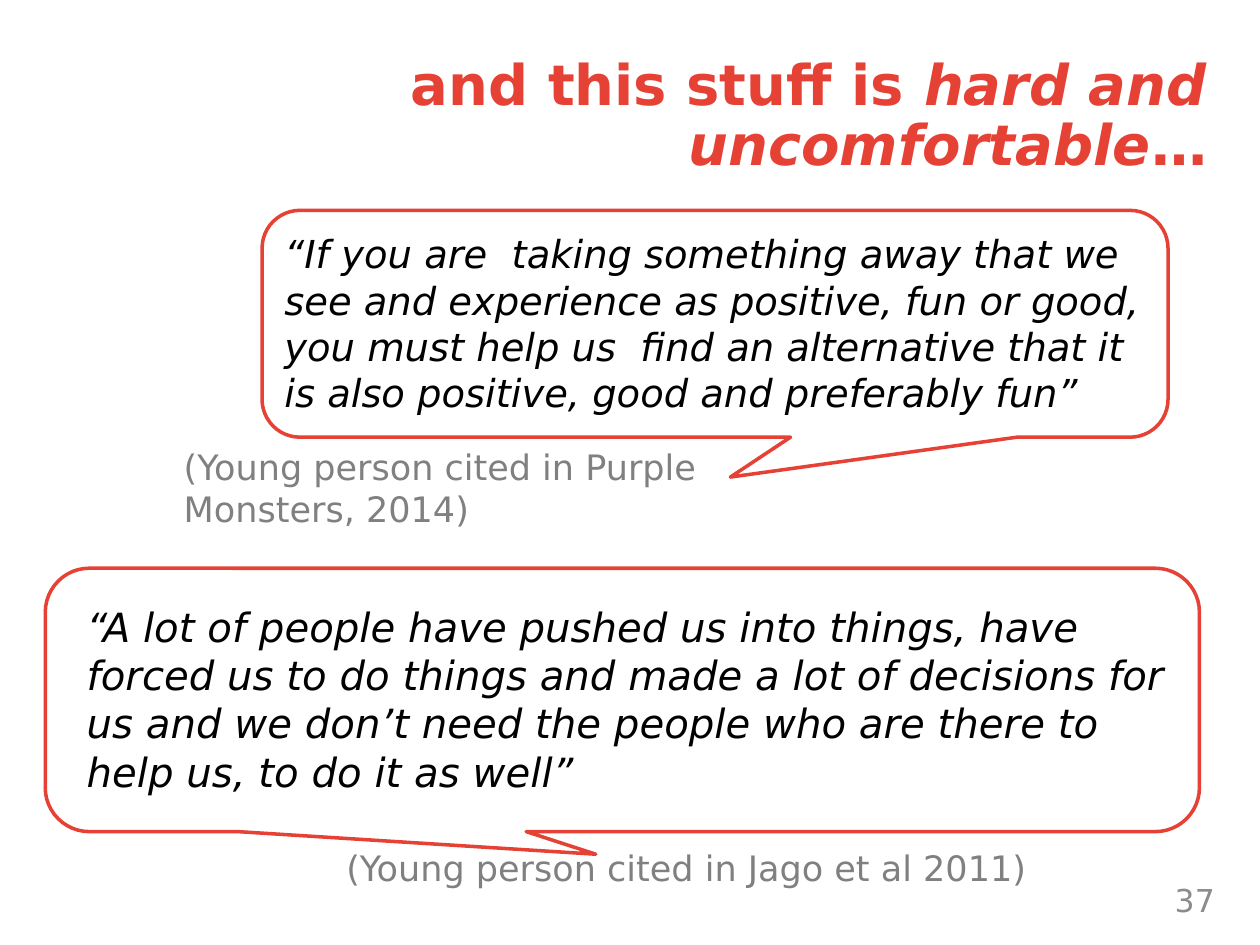
import pptx
import pptx.dml.color
import pptx.enum.shapes
import pptx.enum.text
import pptx.util

Inches = pptx.util.Inches
Align = pptx.enum.text.PP_ALIGN
Anchor = pptx.enum.text.MSO_ANCHOR

RED = "E64135"
BLACK = "000000"
GREY = "808080"
PALE_GREY = "8C8C8C"


def color(value):
    return pptx.dml.color.RGBColor.from_string(value)


def add_text(para, text, size=20, fill=BLACK, bold=False, italic=False):
    span = para.add_run()
    span.text = text
    span.font.name = "DejaVu Sans"
    span.font.size = pptx.util.Pt(size)
    span.font.color.rgb = color(fill)
    span.font.bold = bold
    span.font.italic = italic


class QuoteSlide:
    def __init__(self, deck):
        self.slide = deck.slides.add_slide(deck.slide_layouts[5])
        self.accent = RED

    def title(self, position, parts):
        box = self.slide.shapes.title
        box.left, box.top, box.width, box.height = map(Inches, position)
        box.text_frame.word_wrap = True
        box.text_frame.auto_size = pptx.enum.text.MSO_AUTO_SIZE.NONE
        box.text_frame.vertical_anchor = Anchor.TOP
        para = box.text_frame.paragraphs[0]
        para.alignment = Align.RIGHT
        para.line_spacing = 0.9
        for text, italic in parts:
            add_text(para, text, size=32, fill=self.accent, bold=True, italic=italic)

    def callout(self, position, adjustments):
        shape = self.slide.shapes.add_shape(
            pptx.enum.shapes.MSO_SHAPE.ROUNDED_RECTANGULAR_CALLOUT,
            *map(Inches, position))
        for index, value in enumerate(adjustments):
            shape.adjustments[index] = value
        shape.shadow.inherit = False
        shape.fill.background()
        shape.line.color.rgb = color(self.accent)
        shape.line.width = pptx.util.Pt(2)

    def text(self, position, text, align=Align.LEFT, anchor=Anchor.TOP, **style):
        box = self.slide.shapes.add_textbox(*map(Inches, position))
        box.text_frame.word_wrap = True
        box.text_frame.vertical_anchor = anchor
        para = box.text_frame.paragraphs[0]
        para.alignment = align
        add_text(para, text, **style)


def main():
    deck = pptx.Presentation()
    deck.slide_width, deck.slide_height = Inches(10), Inches(7.5)
    page = QuoteSlide(deck)

    page.title((0.18, 0.4, 9.5, 1.24), [
        ("and this stuff is ", False), ("hard and uncomfortable", True), ("…", False)])

    page.text((0.59, 4.73, 8.84, 1.65),
              "“A lot of people have pushed us into things, have forced us to do things "
              "and made a lot of decisions for us and we don’t need the people who are "
              "there to help us, to do it as well”", size=23, italic=True)
    page.text((1.36, 3.49, 4.56, 0.77),
              "(Young person cited in Purple Monsters, 2014)", fill=GREY)
    page.text((2.65, 6.67, 6.54, 0.44),
              "(Young person cited in Jago et al 2011)", fill=GREY)
    page.callout((0.36, 4.51, 9.16, 2.09), (-0.023, 0.586, 0.167))
    page.callout((2.08, 1.67, 7.19, 1.8), (0.017, 0.676, 0.167))
    page.text((7.41, 6.94, 2.33, 0.4), "37", align=Align.RIGHT,
              anchor=Anchor.MIDDLE, size=18, fill=PALE_GREY)
    page.text((2.16, 1.78, 7.03, 1.58),
              "“If you are  taking something away that we see and experience as "
              "positive, fun or good, you must help us  find an alternative that it is "
              "also positive, good and preferably fun”", size=22, italic=True)

    deck.save("out.pptx")


if __name__ == "__main__":
    main()
